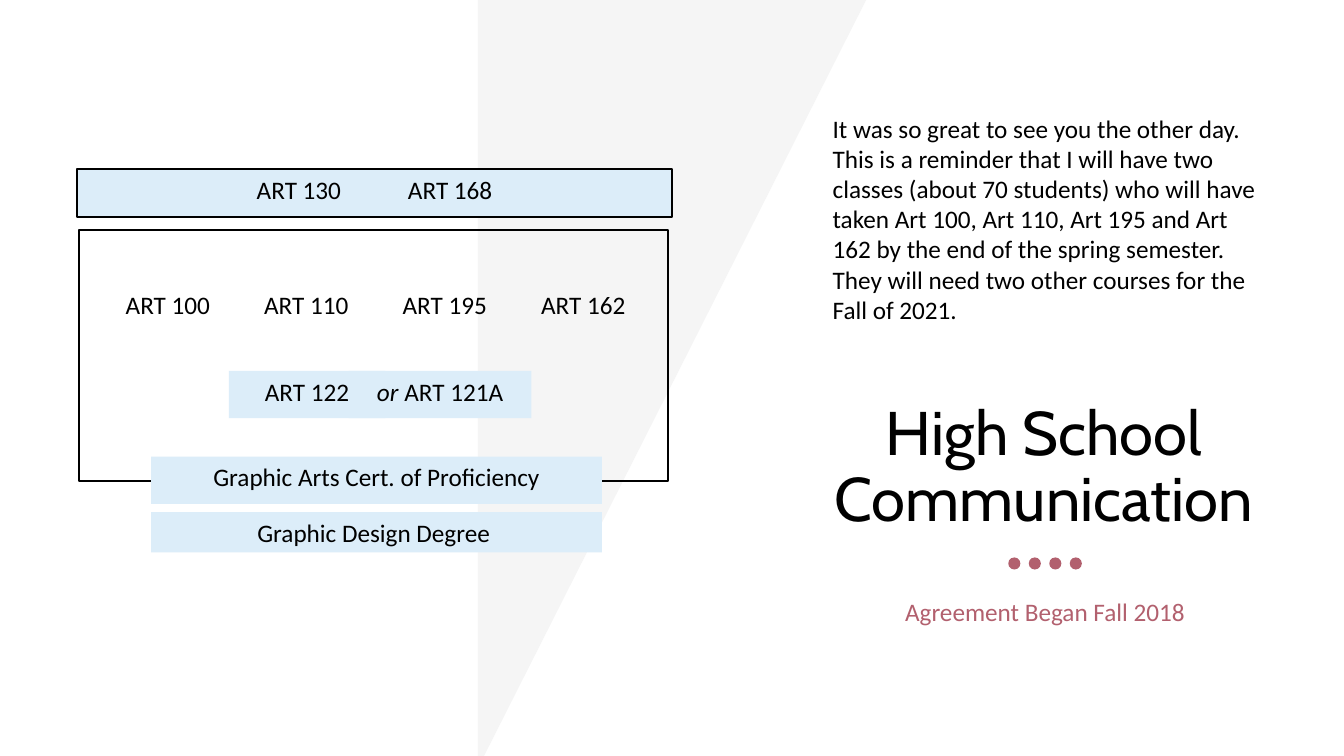
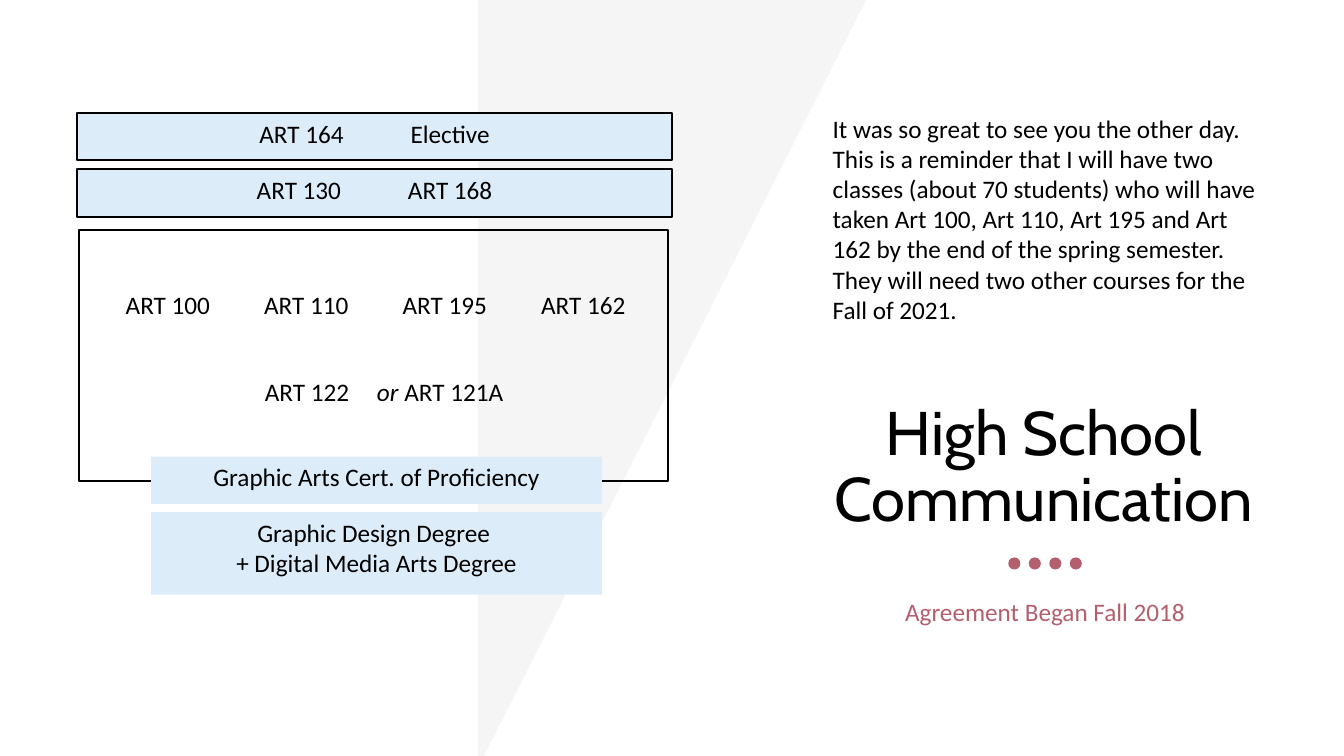
from dataclasses import dataclass

from lxml import etree
from pptx import Presentation
from pptx import util as u
from pptx.dml import color
from pptx.enum import shapes, text
from pptx.oxml import ns

BLACK, WHITE, ROSE = "000000", "FFFFFF", "B2606E"
PALE_BLUE, PALE_GREY = "DCEDF9", "F2F2F2"
HEADING_FONT, BODY_FONT = "Cabin", "Calibri"
ROW_HEIGHT = 0.47

REMINDER = (
    "It was so great to see you the other day. This is a reminder that I will have "
    "two classes (about 70 students) who will have taken Art 100, Art 110, Art 195 "
    "and Art 162 by the end of the spring semester. They will need two other courses "
    "for the Fall of 2021."
)


@dataclass(frozen=True)
class Words:
    text: str
    italic: bool = False


@dataclass(frozen=True)
class Box:
    left: float
    top: float
    width: float
    height: float
    lines: tuple[tuple[Words, ...], ...] = ()
    fill: str | None = None
    outlined: bool = False
    centred: bool = True


def rgb(value: str) -> color.RGBColor:
    return color.RGBColor.from_string(value)


def place(shape, left: float, top: float, width: float, height: float) -> None:
    shape.left, shape.top = u.Inches(left), u.Inches(top)
    shape.width, shape.height = u.Inches(width), u.Inches(height)


def add_words(paragraph, words: Words, size: float = 18,
              font: str = BODY_FONT, ink: str = BLACK) -> None:
    run = paragraph.add_run()
    run.text = words.text
    run.font.name, run.font.size = font, u.Pt(size)
    run.font.italic = words.italic
    run.font.color.rgb = rgb(ink)


def paint(shape, fill: str | None, outlined: bool = False) -> None:
    shape.shadow.inherit = False
    if fill:
        shape.fill.solid()
        shape.fill.fore_color.rgb = rgb(fill)
    else:
        shape.fill.background()
    if outlined:
        shape.line.color.rgb = rgb(BLACK)
        shape.line.width = u.Pt(1.5)
    else:
        shape.line.fill.background()


def draw_box(slide, box: Box) -> None:
    area = [u.Inches(n) for n in (box.left, box.top, box.width, box.height)]
    if box.fill or box.outlined:
        shape = slide.shapes.add_shape(shapes.MSO_SHAPE.RECTANGLE, *area)
        paint(shape, box.fill, box.outlined)
    else:
        shape = slide.shapes.add_textbox(*area)
    frame = shape.text_frame
    frame.word_wrap = True
    frame.vertical_anchor = text.MSO_ANCHOR.TOP
    for index, line in enumerate(box.lines):
        paragraph = frame.add_paragraph() if index else frame.paragraphs[0]
        paragraph.alignment = text.PP_ALIGN.CENTER if box.centred else text.PP_ALIGN.LEFT
        for words in line:
            add_words(paragraph, words)


def fill_placeholder(placeholder, wording: str, size: float, font: str,
                     ink: str, anchor: text.MSO_ANCHOR) -> None:
    frame = placeholder.text_frame
    frame.word_wrap = True
    frame.auto_size = text.MSO_AUTO_SIZE.NONE
    frame.vertical_anchor = anchor
    paragraph = frame.paragraphs[0]
    paragraph.alignment = text.PP_ALIGN.CENTER
    paragraph.line_spacing = 0.9
    add_words(paragraph, Words(wording), size, font, ink)


def prepare_layout(layout) -> None:
    """Place the title and subtitle, and drop the unused footers."""
    for placeholder in list(layout.placeholders):
        if placeholder.placeholder_format.idx > 1:
            placeholder.element.getparent().remove(placeholder.element)
    heading, agreement = layout.placeholders
    place(heading, 7.96, 1.41, 4.79, 3.95)
    place(agreement, 8.08, 5.9, 4.57, 0.57)


def decorate_layout(layout, slide) -> None:
    """Draw the wedge and dots, then move them behind the layout's text."""
    outline = slide.shapes.build_freeform(u.Inches(4.74), 0)
    corners = ((8.59, 0), (4.8, 7.5), (4.74, 7.5))
    outline.add_line_segments([(u.Inches(x), u.Inches(y)) for x, y in corners])
    wedge = outline.convert_to_shape()
    paint(wedge, PALE_GREY)
    tint = wedge.element.spPr.find(ns.qn("a:solidFill")).find(ns.qn("a:srgbClr"))
    etree.SubElement(tint, ns.qn("a:alpha"), val="77000")

    decorations = [wedge]
    for index in range(4):
        dot = slide.shapes.add_shape(
            shapes.MSO_SHAPE.OVAL, u.Inches(10 + index * 0.61 / 3), u.Inches(5.53),
            u.Inches(0.12), u.Inches(0.12))
        paint(dot, ROSE)
        decorations.append(dot)
    heading = layout.placeholders[0].element
    for decoration in decorations:
        heading.addprevious(decoration.element)


def semester_bar(top: float, first: str, second: str) -> Box:
    return Box(0.76, top, 5.91, ROW_HEIGHT, ((Words(f"{first}\t\t{second}"),),),
               PALE_BLUE, outlined=True)


def award_bar(top: float, height: float, *awards: str) -> Box:
    return Box(1.5, top, 4.47, height, tuple((Words(award),) for award in awards), PALE_BLUE)


def program_boxes(option_fill: str | None, degree: Box, *semesters: Box) -> list[Box]:
    """Collect the whole program, from the course frame to the reminder."""
    courses = ("ART 100", "ART 110", "ART 195", "ART 162")
    return [
        Box(0.78, 2.28, 5.85, 2.49, outlined=True),
        *(Box(0.89 + index * 4.12 / 3, 2.82, 1.55, ROW_HEIGHT, ((Words(course),),))
          for index, course in enumerate(courses)),
        Box(2.27, 3.68, 1.55, ROW_HEIGHT, ((Words("ART 122"),),), option_fill),
        Box(3.46, 3.68, 1.81, ROW_HEIGHT,
            ((Words("or", italic=True), Words(" ART 121A")),), option_fill),
        award_bar(4.53, ROW_HEIGHT, "Graphic Arts Cert. of Proficiency"),
        *semesters,
        degree,
        Box(8.16, 1.07, 4.41, 2.22, ((Words(REMINDER),),), centred=False),
    ]


def main() -> None:
    deck = Presentation()
    deck.slide_width, deck.slide_height = u.Inches(13.33), u.Inches(7.5)
    layout = deck.slide_layouts[0]
    prepare_layout(layout)

    fall_courses = semester_bar(1.68, "ART 130", "ART 168")
    design_degree = "Graphic Design Degree "
    programs = (
        program_boxes(PALE_BLUE, award_bar(5.08, 0.4, design_degree), fall_courses),
        program_boxes(
            None, award_bar(5.08, 0.82, design_degree, "+ Digital Media Arts Degree"),
            fall_courses, semester_bar(1.12, "ART 164", "Elective")),
    )
    for index, program in enumerate(programs):
        slide = deck.slides.add_slide(layout)
        if index == 0:
            decorate_layout(layout, slide)
        heading, agreement = slide.placeholders
        fill_placeholder(heading, "High School Communication", 44, HEADING_FONT,
                         BLACK, text.MSO_ANCHOR.BOTTOM)
        fill_placeholder(agreement, "Agreement Began Fall 2018", 18, BODY_FONT,
                         ROSE, text.MSO_ANCHOR.TOP)
        for box in program:
            draw_box(slide, box)

    deck.save("out.pptx")


if __name__ == "__main__":
    main()
